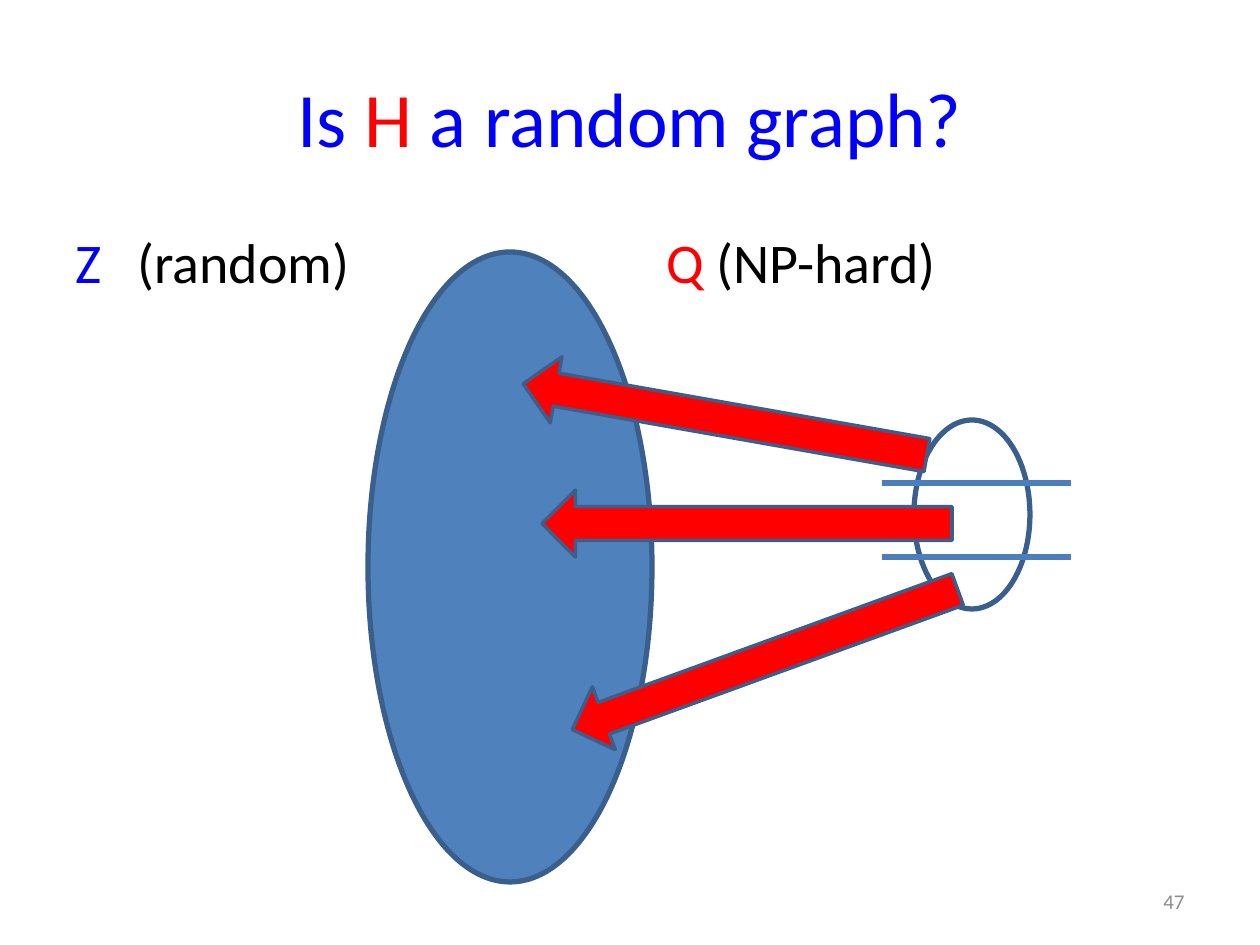
from lxml.etree import SubElement
from pptx import Presentation
from pptx.dml.color import RGBColor
from pptx.enum.shapes import MSO_CONNECTOR, MSO_SHAPE
from pptx.enum.text import MSO_ANCHOR, PP_ALIGN
from pptx.oxml.ns import qn
from pptx.util import Emu, Pt

BLUE = RGBColor(0x00, 0x00, 0xFF)
RED = RGBColor(0xFF, 0x00, 0x00)
BLACK = RGBColor(0x00, 0x00, 0x00)
GREY = RGBColor(0x8C, 0x8C, 0x8C)
FILL = RGBColor(0x4F, 0x81, 0xBD)
OUTLINE = RGBColor(0x3A, 0x5F, 0x8C)
RULE = RGBColor(0x4B, 0x7E, 0xBC)
PX_PER_INCH = 126


def px(n):
    return Emu(round(n * 914400 / PX_PER_INCH))


def add_text(s, box, runs, size, align=PP_ALIGN.LEFT, anchor=MSO_ANCHOR.MIDDLE):
    """Add one paragraph of (text, colour) runs and return it."""
    tf = s.shapes.add_textbox(*map(px, box)).text_frame
    tf.word_wrap = True
    tf.vertical_anchor = anchor
    p = tf.paragraphs[0]
    p.alignment = align
    p.font.name = "Calibri"
    p.font.size = Pt(size)
    for text, color in runs:
        r = p.add_run()
        r.text = text
        r.font.name = "Calibri"
        r.font.size = Pt(size)
        r.font.color.rgb = color
    return p


def add_tabs(p, positions):
    tabs = SubElement(p._p.get_or_add_pPr(), qn("a:tabLst"))
    for pos in positions:
        SubElement(tabs, qn("a:tab"), pos=str(px(pos)), algn="l")


def add_outlined(s, kind, box, fill, weight):
    sp = s.shapes.add_shape(kind, *map(px, box))
    sp.shadow.inherit = False
    if fill is None:
        sp.fill.background()
    else:
        sp.fill.solid()
        sp.fill.fore_color.rgb = fill
    sp.line.color.rgb = OUTLINE
    sp.line.width = Pt(weight)
    return sp


def add_rule(s, x1, x2, y):
    line = s.shapes.add_connector(MSO_CONNECTOR.STRAIGHT, px(x1), px(y), px(x2), px(y))
    line.line.color.rgb = RULE
    line.line.width = Pt(3)
    SubElement(line._element.spPr, qn("a:effectLst"))


def add_headings(s, x, y, w):
    title = [("Is ", BLUE), ("H", RED), (" a random graph?", BLUE)]
    add_text(s, (x, y, w, 158), title, 44, PP_ALIGN.CENTER)
    labels = [("Z", BLUE), ("\t(random)\t", BLACK), ("Q", RED), (" (NP-hard)", BLACK)]
    p = add_text(s, (x, y + 183, w, 80), labels, 32, anchor=MSO_ANCHOR.TOP)
    add_tabs(p, (62, 591))


def add_diagram(s, x, y):
    """Draw the large set, the small set and the arrows between them."""
    add_outlined(s, MSO_SHAPE.OVAL, (x, y, 284, 630), FILL, 3)
    add_outlined(s, MSO_SHAPE.OVAL, (x + 546, y + 168, 116, 189), None, 3)
    for dy in (231, 305):
        add_rule(s, x + 514, x + 703, y + dy)
    for dx, dy, angle in ((152, 134, 10), (174, 238, 0), (192, 374, -20)):
        arrow = add_outlined(s, MSO_SHAPE.LEFT_ARROW, (x + dx, y + dy, 410, 67), RED, 2)
        arrow.rotation = angle


def main():
    prs = Presentation()
    prs.slide_width, prs.slide_height = px(1260), px(945)
    s = prs.slides.add_slide(prs.slide_layouts[6])
    add_headings(s, 63, 38, 1134)
    add_text(s, (903, 876, 294, 50), [("47", GREY)], 12, PP_ALIGN.RIGHT)
    add_diagram(s, 368, 252)
    prs.save("out.pptx")


if __name__ == "__main__":
    main()
